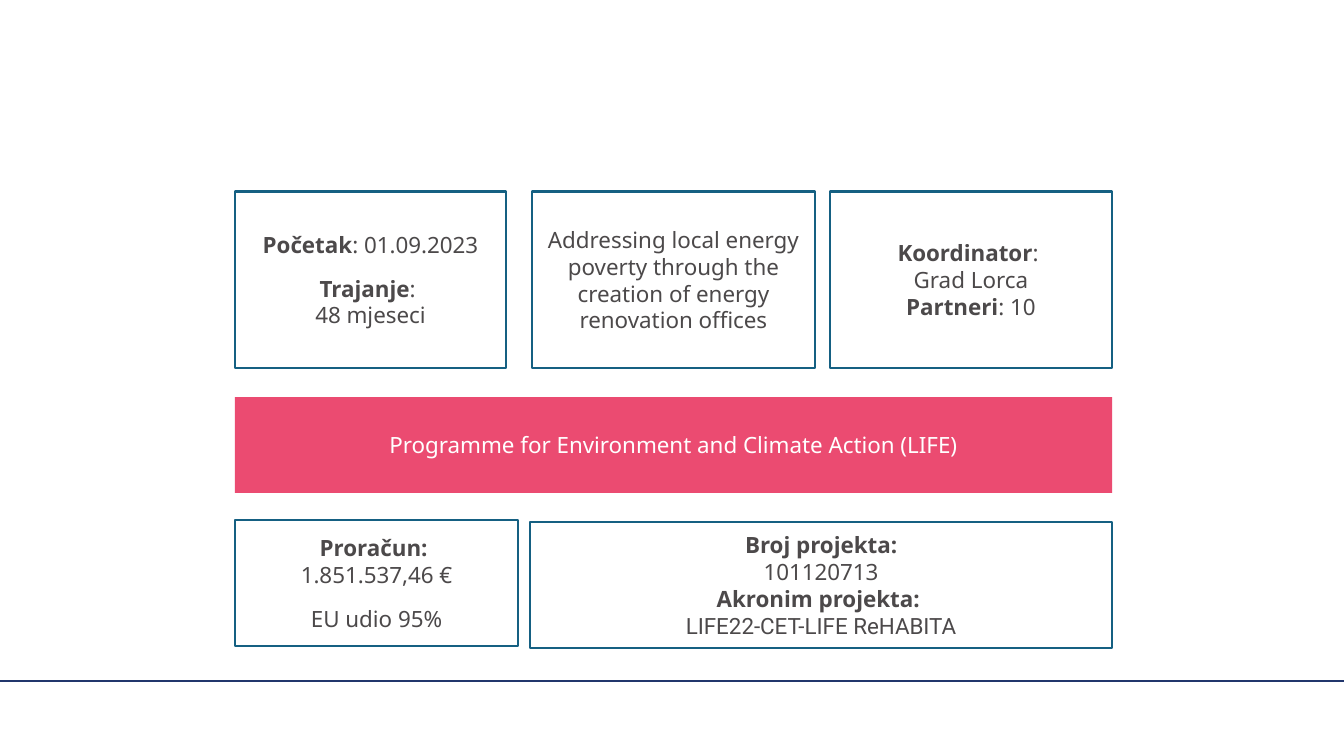
"""Build the project facts slide."""
from lxml import etree
from pptx import Presentation
from pptx.dml.color import RGBColor
from pptx.enum.shapes import MSO_CONNECTOR, MSO_SHAPE
from pptx.enum.text import MSO_ANCHOR, PP_ALIGN
from pptx.oxml.ns import qn
from pptx.util import Inches, Pt

RECT = MSO_SHAPE.RECTANGLE
LINE = MSO_CONNECTOR.STRAIGHT
MID = MSO_ANCHOR.MIDDLE
CENTER = PP_ALIGN.CENTER
WHITE = RGBColor(0xFF, 0xFF, 0xFF)
PINK = RGBColor(0xEB, 0x4B, 0x71)
TEAL = RGBColor(0x15, 0x60, 0x82)
NAVY = RGBColor(0x21, 0x36, 0x6C)
GREY = RGBColor(0x4C, 0x49, 0x4A)
SANS, ROBOTO = "Noto Sans", "Roboto"
SIZE = 16
WIDE, HIGH = 13.33, 7.5
LEFT, RIGHT = 2.33, 11.03
RULE_Y = 6.76

BANNER = [[("Programme for Environment and Climate Action (LIFE)", False, SANS)]]
START = [
    [("Početak", True, SANS), (": 01.09.2023", False, SANS)],
    [("Trajanje", True, SANS), (": \n48 mjeseci", False, SANS)],
]
TITLE = [[("Addressing local energy poverty through the creation of energy "
           "renovation offices", False, SANS)]]
TEAM = [
    [("Koordinator", True, SANS), (": \nGrad Lorca", False, SANS)],
    [("Partneri", True, SANS), (": 10", False, SANS)],
]
BUDGET = [
    [("Proračun: \n", True, SANS), ("1.851.537,46 €", False, SANS)],
    [("EU udio 95%", False, SANS)],
]
PROJECT = [
    [("Broj projekta:", True, SANS)],
    [("101120713", False, SANS)],
    [("Akronim projekta: ", True, SANS)],
    [("LIFE22-CET-LIFE ReHABITA", False, ROBOTO)],
]

# text, left, top, width, height, paragraph gap
TOP, TALL, LOW = 1.9, 1.75, 1.25
CARDS = [
    (TITLE, 5.28, TOP, 2.8, TALL, 0),
    (START, LEFT, TOP, 2.69, TALL, 6),
    (TEAM, RIGHT - 2.8, TOP, 2.8, TALL, 0),
    (BUDGET, LEFT, 5.16, 2.81, LOW, 6),
    (PROJECT, RIGHT - 5.77, 5.18, 5.77, LOW, 0),
]


def write(frame, paras, color, gap):
    frame.word_wrap = True
    frame.vertical_anchor = MID
    for i, parts in enumerate(paras):
        para = frame.paragraphs[0] if i == 0 else frame.add_paragraph()
        para.alignment = CENTER
        para.space_before = Pt(gap if i else 0)
        para.space_after = Pt(gap)
        for text, bold, face in parts:
            for j, piece in enumerate(text.split("\n")):
                if j:
                    para.add_line_break()
                if piece:
                    run = para.add_run()
                    run.text = piece
                    run.font.size = Pt(SIZE)
                    run.font.name = face
                    run.font.bold = bold
                    run.font.color.rgb = color
        for br in para._p.findall(qn("a:br")):
            props = etree.SubElement(br, qn("a:rPr"), sz=str(SIZE * 100))
            etree.SubElement(props, qn("a:latin"), typeface=SANS)


def add_box(slide, paras, left, top, width, height, gap, fill, edge, color):
    box = slide.shapes.add_shape(
        RECT, Inches(left), Inches(top), Inches(width), Inches(height))
    box.shadow.inherit = False
    box.fill.solid()
    box.fill.fore_color.rgb = fill
    if edge is None:
        box.line.fill.background()
    else:
        box.line.color.rgb = edge
        box.line.width = Pt(1.5)
    write(box.text_frame, paras, color, gap)


def main():
    deck = Presentation()
    deck.slide_width, deck.slide_height = Inches(WIDE), Inches(HIGH)
    slide = deck.slides.add_slide(deck.slide_layouts[6])
    rule = slide.shapes.add_connector(
        LINE, 0, Inches(RULE_Y), Inches(WIDE), Inches(RULE_Y))
    rule.line.color.rgb = NAVY
    rule.line.width = Pt(1.5)
    etree.SubElement(rule._element.spPr, qn("a:effectLst"))
    add_box(slide, BANNER, LEFT, 3.94, RIGHT - LEFT, 0.95, 6, PINK, None, WHITE)
    for card in CARDS:
        add_box(slide, *card, WHITE, TEAL, GREY)
    deck.save("out.pptx")


if __name__ == "__main__":
    main()
